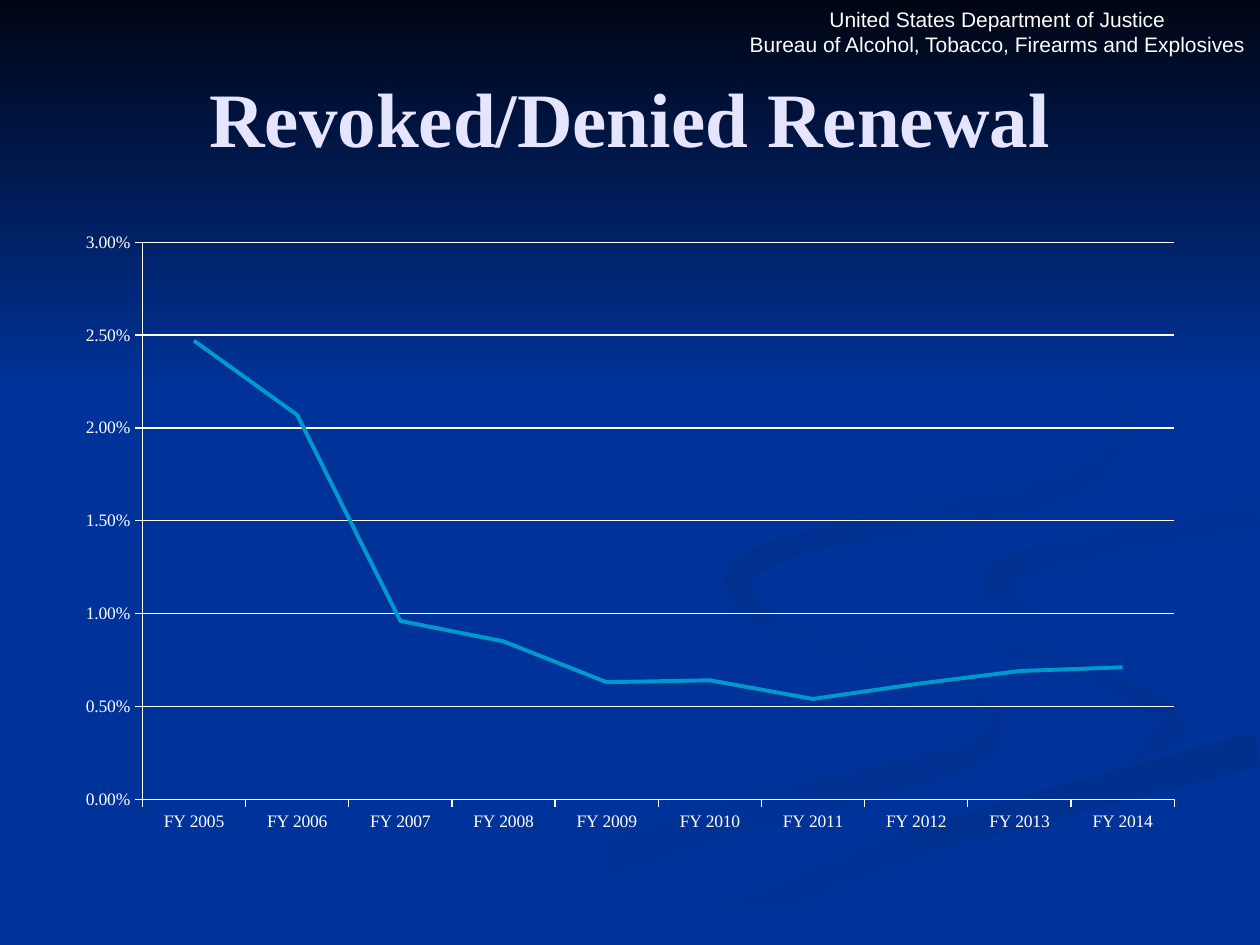
from math import hypot

from lxml import etree
from pptx import Presentation
from pptx.chart.data import CategoryChartData
from pptx.dml.color import RGBColor
from pptx.enum.chart import XL_CHART_TYPE, XL_MARKER_STYLE, XL_TICK_MARK
from pptx.enum.shapes import MSO_SHAPE
from pptx.enum.text import MSO_ANCHOR, PP_ALIGN
from pptx.oxml.ns import qn
from pptx.util import Pt

LINE_CHART = XL_CHART_TYPE.LINE
NO_MARKER = XL_MARKER_STYLE.NONE
TICK_OUT = XL_TICK_MARK.OUTSIDE
RECTANGLE = MSO_SHAPE.RECTANGLE
CENTER = PP_ALIGN.CENTER
MIDDLE, BOTTOM = MSO_ANCHOR.MIDDLE, MSO_ANCHOR.BOTTOM

BLUE = RGBColor(0x00, 0x33, 0x99)
NIGHT = RGBColor(0x00, 0x05, 0x14)
SHADE = RGBColor(0x00, 0x2F, 0x8C)
SOFT_SHADE = RGBColor(0x00, 0x30, 0x91)
FAINT_SHADE = RGBColor(0x00, 0x31, 0x93)
WHITE = RGBColor(0xFF, 0xFF, 0xFF)
LAVENDER = RGBColor(0xE5, 0xE5, 0xFF)
TEAL = RGBColor(0x00, 0x99, 0xCC)

PAGE_WIDTH, PAGE_HEIGHT = 720, 540
SKY_HEIGHT = 222
STEPS_PER_BEND = 6
UNITS_PER_POINT = 10

AGENCY = ["United States Department of Justice",
          "Bureau of Alcohol, Tobacco, Firearms and Explosives"]
TITLE = ["Revoked/Denied Renewal"]
FIRST_YEAR = 2005
RATES = [0.0247, 0.0207, 0.0096, 0.0085, 0.0063, 0.0064, 0.0054, 0.0062, 0.0069, 0.0071]
PLOT_LAYOUT = {"x": 0.07, "y": 0.035, "w": 0.91, "h": 0.893}

# Each bend is the centre of the ribbon and its thickness: x, y, thickness.
RIBBONS = [
    {"bends": [(414, 330, 0), (413, 343, 3), (440, 358, 2), (510, 379, 2), (558, 398, 4),
               (570, 413, 10), (557, 430, 15), (511, 444, 18), (425, 466, 20),
               (310, 504, 20), (238, 539, 20)],
     "colors": (BLUE, FAINT_SHADE), "angle": 0},
    {"bends": [(522, 334, 0), (540, 358, 4), (612, 381, 8), (658, 402, 12),
               (669, 417, 18), (644, 436, 0)],
     "colors": (BLUE, FAINT_SHADE), "angle": 45},
    {"bends": [(719, 428, 20), (595, 461, 18), (501, 490, 16), (440, 516, 16),
               (386, 539, 20)],
     "colors": (SHADE, BLUE), "angle": 90},
    {"bends": [(719, 295, 13), (640, 309, 14), (581, 324, 16), (571, 336, 18),
               (595, 357, 0)],
     "colors": (SOFT_SHADE, BLUE), "angle": 45},
    {"bends": [(549, 168, 0), (625, 212, 2), (642, 248, 5), (611, 277, 14), (541, 295, 16),
               (467, 308, 12), (430, 322, 14), (421, 336, 12), (448, 360, 0)],
     "colors": (SHADE, BLUE), "angle": 45},
]


def spline(before, start, end, after, t):
    return 0.5 * (2 * start + (end - before) * t
                  + (2 * before - 5 * start + 4 * end - after) * t ** 2
                  + (3 * start - before - 3 * end + after) * t ** 3)


def smooth_bends(bends):
    padded = [bends[0], *bends, bends[-1]]
    curve = []
    for four_bends in zip(padded, padded[1:], padded[2:], padded[3:]):
        for step in range(STEPS_PER_BEND):
            t = step / STEPS_PER_BEND
            curve.append(tuple(spline(*values, t) for values in zip(*four_bends)))
    return curve + [bends[-1]]


def ribbon_outline(bends):
    curve = smooth_bends(bends)
    left_edge, right_edge = [], []
    for i, (x, y, thickness) in enumerate(curve):
        previous, following = curve[max(i - 1, 0)], curve[min(i + 1, len(curve) - 1)]
        dx, dy = following[0] - previous[0], following[1] - previous[1]
        half = max(thickness, 0) / 2 / hypot(dx, dy)
        for edge, side in ((left_edge, half), (right_edge, -half)):
            edge.append((min(x + dy * side, PAGE_WIDTH) * UNITS_PER_POINT,
                         min(y - dx * side, PAGE_HEIGHT) * UNITS_PER_POINT))
    return left_edge + right_edge[::-1]


def paint_gradient(shape, colors, angle):
    shape.shadow.inherit = False
    shape.line.fill.background()
    shape.fill.gradient()
    shape.fill.gradient_angle = (360 - angle) % 360
    for stop, color in zip(shape.fill.gradient_stops, colors):
        stop.color.rgb = color


def add_ribbon(page, bends, colors, angle):
    points = ribbon_outline(bends)
    builder = page.shapes.build_freeform(*points[0], scale=Pt(1) / UNITS_PER_POINT)
    builder.add_line_segments(points[1:], close=True)
    paint_gradient(builder.convert_to_shape(), colors, angle)


def add_backdrop(page):
    page.background.fill.solid()
    page.background.fill.fore_color.rgb = BLUE
    for ribbon in RIBBONS:
        add_ribbon(page, **ribbon)
    sky = page.shapes.add_shape(RECTANGLE, 0, 0, Pt(PAGE_WIDTH), Pt(SKY_HEIGHT))
    paint_gradient(sky, (NIGHT, BLUE), 90)


def style_font(font, name, size, color, bold=False):
    font.name, font.size, font.bold = name, Pt(size), bold
    font.color.rgb = color


def add_text(page, lines, place, anchor, *style):
    box = page.shapes.add_textbox(*map(Pt, place))
    frame = box.text_frame
    frame.word_wrap = True
    frame.vertical_anchor = anchor
    frame.text = "\n".join(lines)
    for para in frame.paragraphs:
        para.alignment = CENTER
        for span in para.runs:
            style_font(span.font, *style)


def style_line(line, color, width):
    line.color.rgb = color
    line.width = Pt(width)


def set_plot_layout(chart):
    plot_area = chart._chartSpace.find(".//" + qn("c:plotArea"))
    for old in plot_area.findall(qn("c:layout")):
        plot_area.remove(old)
    layout = etree.Element(qn("c:layout"))
    manual = etree.SubElement(layout, qn("c:manualLayout"))
    settings = {"layoutTarget": "inner", "xMode": "edge", "yMode": "edge", **PLOT_LAYOUT}
    for tag, value in settings.items():
        etree.SubElement(manual, qn("c:" + tag)).set("val", str(value))
    plot_area.insert(0, layout)


def add_rate_chart(page):
    data = CategoryChartData(number_format="0.00%")
    data.categories = [f"FY {FIRST_YEAR + i}" for i in range(len(RATES))]
    data.add_series("Series 1", RATES)
    chart = page.shapes.add_chart(LINE_CHART, Pt(36), Pt(126), Pt(648), Pt(356.4), data).chart
    chart.has_legend = False
    chart.has_title = False
    style_font(chart.font, "Times New Roman", 10, WHITE)
    chart.plots[0].vary_by_categories = False
    series = chart.plots[0].series[0]
    series.smooth = False
    series.marker.style = NO_MARKER
    style_line(series.format.line, TEAL, 2.25)
    rate_axis = chart.value_axis
    for axis in (chart.category_axis, rate_axis):
        axis.major_tick_mark = TICK_OUT
        style_line(axis.format.line, WHITE, 0.75)
    rate_axis.minimum_scale, rate_axis.maximum_scale, rate_axis.major_unit = 0, 0.03, 0.005
    rate_axis.tick_labels.number_format = "0.00%"
    rate_axis.tick_labels.number_format_is_linked = False
    rate_axis.has_major_gridlines = True
    style_line(rate_axis.major_gridlines.format.line, WHITE, 0.75)
    set_plot_layout(chart)


def main():
    deck = Presentation()
    deck.slide_width, deck.slide_height = Pt(PAGE_WIDTH), Pt(PAGE_HEIGHT)
    page = deck.slides.add_slide(deck.slide_layouts[6])
    add_backdrop(page)
    add_text(page, AGENCY, (420, 4, 300, 32), BOTTOM, "Arial", 12, WHITE)
    add_text(page, TITLE, (36, 21.6, 648, 90), MIDDLE, "Times New Roman", 44, LAVENDER, True)
    add_rate_chart(page)
    deck.save("out.pptx")


if __name__ == "__main__":
    main()
